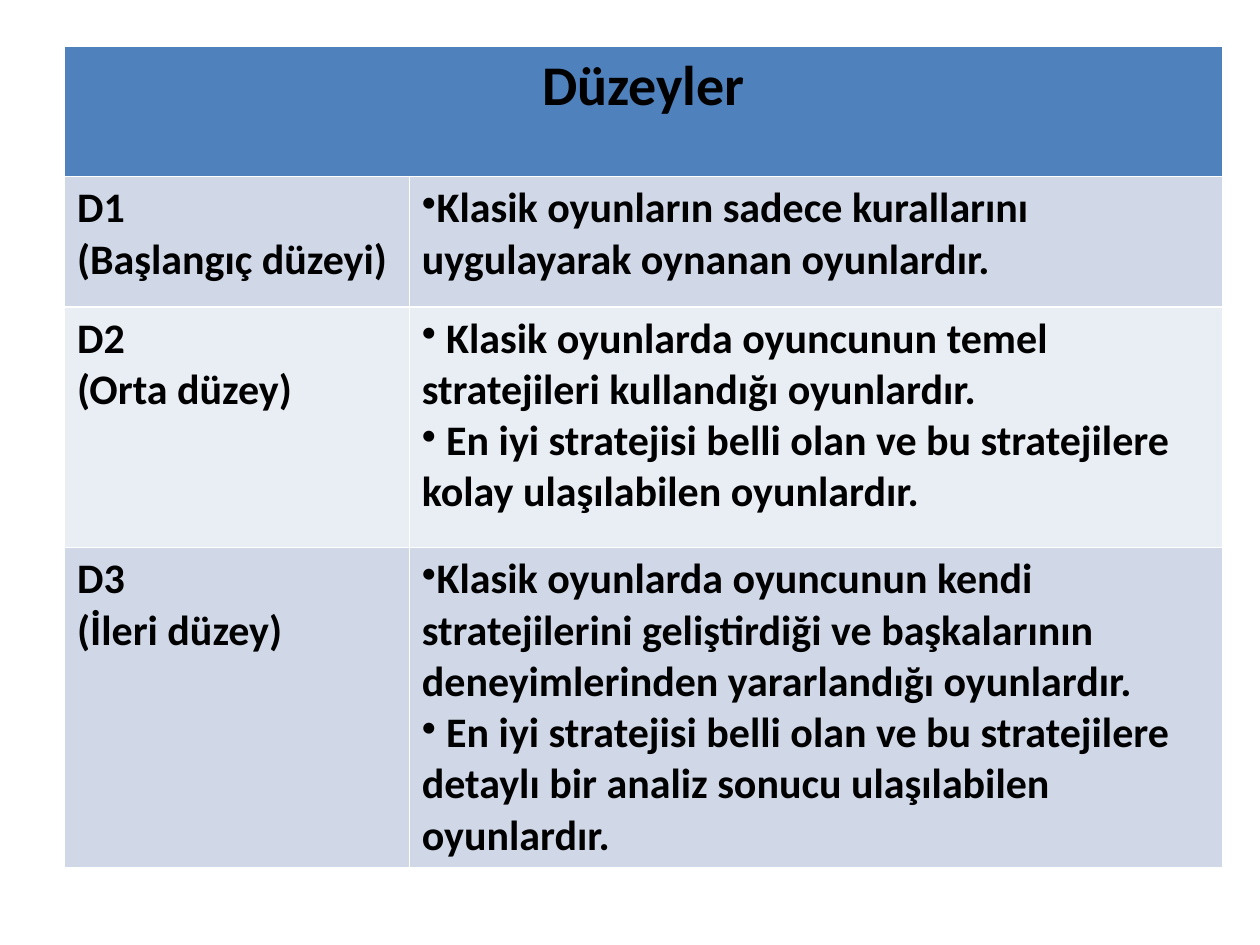
"""Build a slide with a table describing the three game levels."""
from lxml import etree
from pptx import Presentation
from pptx.dml.color import RGBColor
from pptx.enum import text
from pptx.oxml import ns
from pptx.util import Cm, Pt


def rgb(value):
    return RGBColor.from_string(value)


def fill_cell(cell, lines, color, size=24):
    cell.fill.solid()
    cell.fill.fore_color.rgb = rgb(color)
    tf = cell.text_frame
    for i, line in enumerate(lines):
        p = tf.paragraphs[0] if i == 0 else tf.add_paragraph()
        p.text = line.removeprefix("•")
        p.font.name = "Calibri"
        p.font.size = Pt(size)
        p.font.bold = True
        p.font.color.rgb = rgb("000000")
        if line.startswith("•"):
            pPr = p._p.get_or_add_pPr()
            bullet = etree.Element(ns.qn("a:buChar"), char="•")
            pPr.insert(list(pPr).index(pPr.find(ns.qn("a:defRPr"))), bullet)


levels = [
    (["D1", "(Başlangıç düzeyi)"],
     ["•Klasik oyunların sadece kurallarını uygulayarak oynanan oyunlardır."]),
    (["D2", "(Orta düzey)"],
     ["• Klasik oyunlarda oyuncunun temel",
      "stratejileri kullandığı oyunlardır.",
      "• En iyi stratejisi belli olan ve bu stratejilere kolay "
      "ulaşılabilen oyunlardır."]),
    (["D3", "(İleri düzey)"],
     ["•Klasik oyunlarda oyuncunun kendi stratejilerini geliştirdiği ve "
      "başkalarının deneyimlerinden yararlandığı oyunlardır.",
      "• En iyi stratejisi belli olan ve bu stratejilere detaylı bir analiz "
      "sonucu ulaşılabilen oyunlardır."]),
]
widths = [6.95, 16.4]
heights = [2.63, 2.63, 4.85, 6.4]

prs = Presentation()
prs.slide_width, prs.slide_height = Cm(25.4), Cm(19.05)
s = prs.slides.add_slide(prs.slide_layouts[6])
table = s.shapes.add_table(len(heights), len(widths), Cm(1.3), Cm(0.93),
                           Cm(sum(widths)), Cm(sum(heights))).table
for column, width in zip(table.columns, widths):
    column.width = Cm(width)
for row, height in zip(table.rows, heights):
    row.height = Cm(height)

header = table.cell(0, 0)
header.merge(table.cell(0, 1))
fill_cell(header, ["Düzeyler"], "4F81BD", 32)
header.text_frame.paragraphs[0].alignment = text.PP_ALIGN.CENTER

for i, level in enumerate(levels, 1):
    for j, lines in enumerate(level):
        fill_cell(table.cell(i, j), lines, "D0D8E8" if i % 2 else "E9EDF4")

prs.save("out.pptx")
